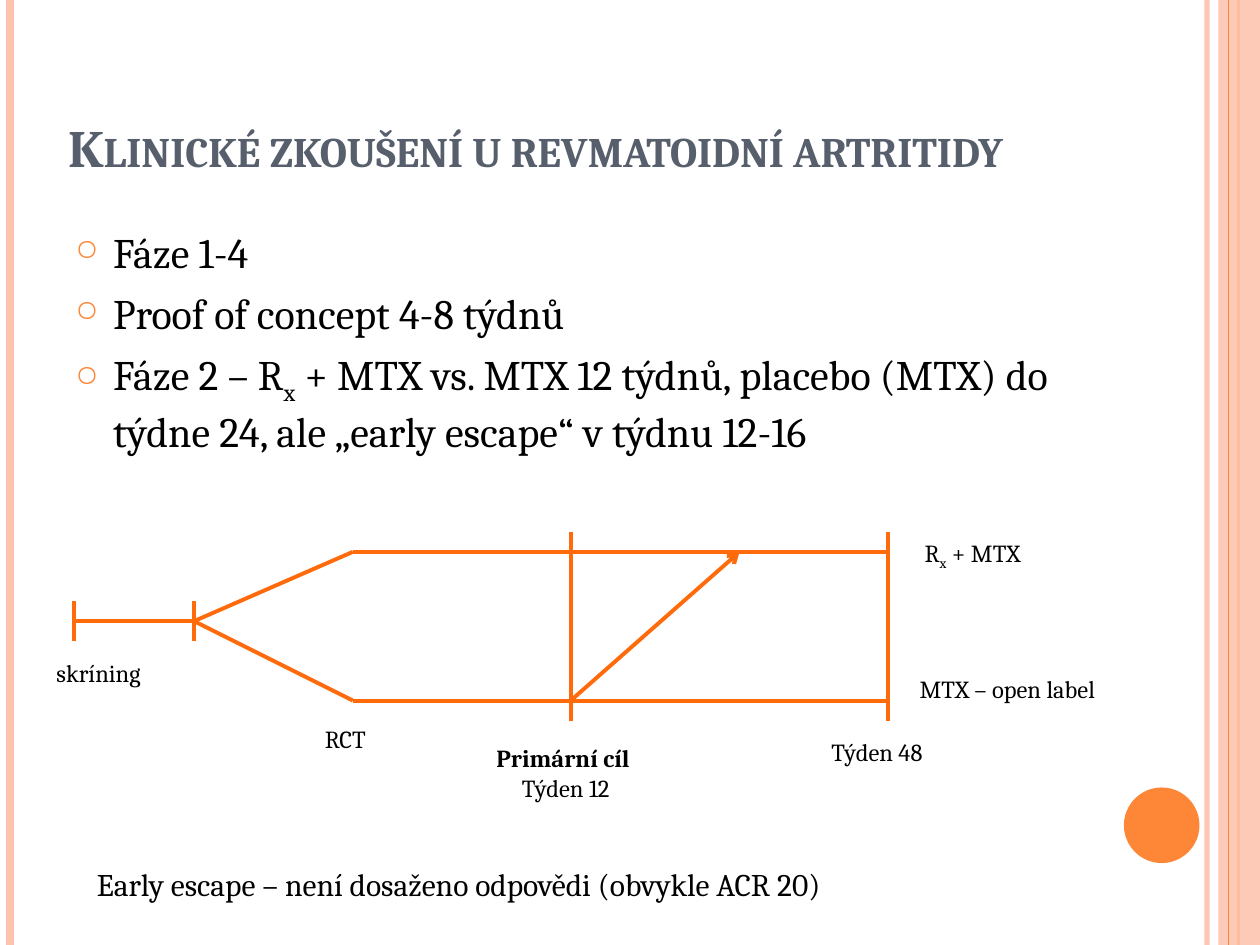
import pptx
import pptx.dml.color
import pptx.enum.shapes
import pptx.enum.text
import pptx.oxml.ns
import pptx.util
from lxml import etree

Inches, Pt = pptx.util.Inches, pptx.util.Pt
ALIGN, ANCHOR = pptx.enum.text.PP_ALIGN, pptx.enum.text.MSO_ANCHOR
SHAPE, CONNECTOR = pptx.enum.shapes.MSO_SHAPE, pptx.enum.shapes.MSO_CONNECTOR
qn = pptx.oxml.ns.qn

THEME = {
    "font": "Cambria",
    "title": "575F6D", "text": "000000",
    "accent": "FE8637", "pale": "FEC3AE", "diagram": "FF6B0A",
    "title_size": 30, "body_size": 24, "note_size": 18, "label_size": 14,
    "diagram_width": 2.25,
}

# Runs are (text, style), style being "", "bold" or "sub".
TITLE = "Klinické zkoušení u revmatoidní artritidy"
BULLETS = [
    [("Fáze 1-4", "")],
    [("Proof of concept 4-8 týdnů", "")],
    [("Fáze 2 – R", ""), ("x", "sub"),
     (" + MTX vs. MTX 12 týdnů, placebo (MTX) do týdne 24, ale „early escape“ v týdnu 12-16", "")],
]
LABELS = [  # box, paragraphs, alignment
    ((0.35, 5.17, 1.5, 0.34), [[("skríning", "")]], ALIGN.LEFT),
    ((2.48, 5.7, 1.5, 0.34), [[("RCT", "")]], ALIGN.LEFT),
    ((3.74, 5.85, 1.5, 0.57), [[("Primární cíl ", "bold")], [("Týden 12", "")]], ALIGN.CENTER),
    ((6.5, 5.8, 1.5, 0.34), [[("Týden 48", "")]], ALIGN.LEFT),
    ((7.2, 5.3, 1.89, 0.34), [[("MTX – open label", "")]], ALIGN.LEFT),
    ((7.24, 4.22, 1.5, 0.34), [[("R", ""), ("x", "sub"), (" + MTX", "")]], ALIGN.LEFT),
]
NOTE = [[("Early escape – není dosaženo odpovědi (obvykle ACR 20)", "")]]

EDGE_LINES = [  # x, colour, width, opacity in percent
    (9.58, "pale", 3, 93), (0.08, "pale", 4.5, 100), (9.83, "accent", 1.5, 100),
]
BAND_LINE = (9.75, "accent", 0.75, 100)

# Trial timeline: x of each stage, y of each arm, half height of a tick
SCREENING, RANDOMISED, ARMS_START, WEEK_12, ESCAPE, WEEK_48 = 0.59, 1.54, 2.8, 4.53, 5.87, 7.05
TOP_ARM, ENTRY, BOTTOM_ARM, TICK = 4.38, 4.93, 5.56, 0.16


def color(name):
    return pptx.dml.color.RGBColor.from_string(THEME[name])


def set_opacity(fill_parent, percent):
    if percent < 100:
        rgb = next(fill_parent.iter(qn("a:srgbClr")))
        etree.SubElement(rgb, qn("a:alpha"), val=str(percent * 1000))


def add_line(slide, start, end, color_name="diagram", width=THEME["diagram_width"],
             opacity=100, arrow=False):
    line = slide.shapes.add_connector(CONNECTOR.STRAIGHT, *map(Inches, start + end))
    line.line.color.rgb = color(color_name)
    line.line.width = Pt(width)
    properties = line._element.spPr
    set_opacity(properties, opacity)
    if arrow:
        etree.SubElement(properties.find(qn("a:ln")), qn("a:tailEnd"), type="arrow")
    etree.SubElement(properties, qn("a:effectLst"))


def add_edge_line(slide, x, color_name, width, opacity):
    add_line(slide, (x, 0), (x, 7.5), color_name, width, opacity)


def add_filled(slide, preset, box, color_name, opacity=100):
    shape = slide.shapes.add_shape(preset, *map(Inches, box))
    shape.shadow.inherit = False
    shape.fill.solid()
    shape.fill.fore_color.rgb = color(color_name)
    set_opacity(shape._element.spPr, opacity)
    shape.line.fill.background()


def add_run(paragraph, text, size, style="", color_name="text"):
    run = paragraph.add_run()
    run.text = text
    run.font.name = THEME["font"]
    run.font.size = Pt(THEME[size])
    run.font.color.rgb = color(color_name)
    if style == "bold":
        run.font.bold = True
    elif style == "sub":
        run._r.get_or_add_rPr().set("baseline", "-25000")
    return run


def set_bullet(paragraph):
    properties = paragraph._p.get_or_add_pPr()
    properties.set("marL", str(Inches(0.3)))
    properties.set("indent", str(-Inches(0.3)))
    bullet_color = etree.SubElement(properties, qn("a:buClr"))
    etree.SubElement(bullet_color, qn("a:srgbClr"), val=THEME["accent"])
    etree.SubElement(properties, qn("a:buSzPct"), val="70000")
    etree.SubElement(properties, qn("a:buChar"), char="○")


def add_text(slide, box, paragraphs, size, alignment=ALIGN.LEFT, bullets=False):
    frame = slide.shapes.add_textbox(*map(Inches, box)).text_frame
    frame.word_wrap = True
    for index, runs in enumerate(paragraphs):
        paragraph = frame.add_paragraph() if index else frame.paragraphs[0]
        paragraph.alignment = alignment
        if bullets:
            set_bullet(paragraph)
            paragraph.space_before = Pt(6 if index else 0)
        for text, style in runs:
            add_run(paragraph, text, size, style)


def add_background(slide):
    for edge in EDGE_LINES:
        add_edge_line(slide, *edge)
    add_filled(slide, SHAPE.RECTANGLE, (9.67, 0, 0.33, 7.5), "pale", 87)
    add_edge_line(slide, *BAND_LINE)
    add_filled(slide, SHAPE.OVAL, (8.92, 6.25, 0.6, 0.6), "accent")


def fill_title(slide):
    title = slide.shapes.title
    title.left, title.top, title.width, title.height = map(Inches, (0.44, 0.21, 8.17, 1.25))
    title.text_frame.vertical_anchor = ANCHOR.BOTTOM
    paragraph = title.text_frame.paragraphs[0]
    paragraph.alignment = ALIGN.LEFT
    run = add_run(paragraph, TITLE, "title_size", "bold", "title")
    run._r.get_or_add_rPr().set("cap", "small")


def add_timeline(slide):
    add_line(slide, (SCREENING, ENTRY), (RANDOMISED, ENTRY))
    for x in (SCREENING, RANDOMISED):
        add_line(slide, (x, ENTRY - TICK), (x, ENTRY + TICK))
    for arm in (TOP_ARM, BOTTOM_ARM):
        add_line(slide, (RANDOMISED, ENTRY), (ARMS_START, arm))
        add_line(slide, (ARMS_START, arm), (WEEK_48, arm))
    for x in (WEEK_48, WEEK_12):
        add_line(slide, (x, TOP_ARM - TICK), (x, BOTTOM_ARM + TICK))
    add_line(slide, (WEEK_12, BOTTOM_ARM), (ESCAPE, TOP_ARM), arrow=True)


def main():
    presentation = pptx.Presentation()
    presentation.slide_width, presentation.slide_height = Inches(10), Inches(7.5)
    slide = presentation.slides.add_slide(presentation.slide_layouts.get_by_name("Title Only"))
    add_background(slide)
    fill_title(slide)
    add_text(slide, (0.5, 1.75, 8.52, 2.2), BULLETS, "body_size", bullets=True)
    add_timeline(slide)
    for box, paragraphs, alignment in LABELS:
        add_text(slide, box, paragraphs, "label_size", alignment)
    add_text(slide, (0.67, 6.82, 7.09, 0.4), NOTE, "note_size")
    presentation.save("out.pptx")


if __name__ == "__main__":
    main()
